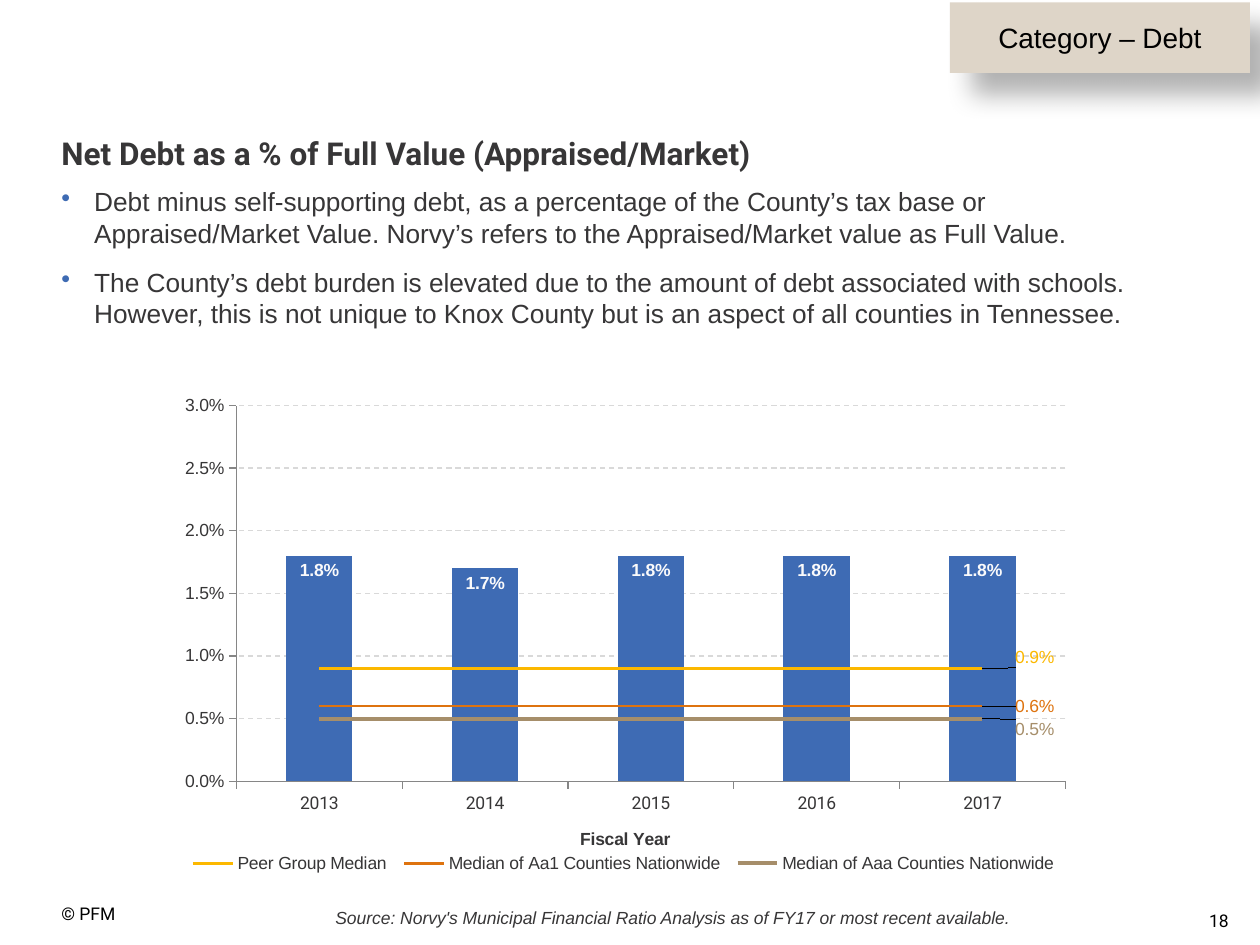
from dataclasses import dataclass

from lxml.etree import SubElement
from pptx import Presentation
from pptx.chart.data import CategoryChartData
from pptx.dml.color import RGBColor
from pptx.enum.chart import XL_CHART_TYPE, XL_LABEL_POSITION, XL_LEGEND_POSITION, XL_TICK_MARK
from pptx.enum.dml import MSO_LINE
from pptx.enum.shapes import MSO_SHAPE
from pptx.enum.text import MSO_ANCHOR, PP_ALIGN
from pptx.oxml import parse_xml
from pptx.oxml.ns import nsdecls, qn
from pptx.slide import Slide
from pptx.util import Cm, Pt

YEARS = ["2013", "2014", "2015", "2016", "2017"]
COUNTY_DEBT = [0.018, 0.017, 0.018, 0.018, 0.018]
# name, constant value, colour, line width, vertical shift of the end label
MEDIANS = [
    ("Peer Group Median", 0.009, "FCB800", 1.5, -0.02),
    ("Median of Aa1 Counties Nationwide", 0.006, "DE730F", 1.5, 0),
    ("Median of Aaa Counties Nationwide", 0.005, "A68E6A", 2.25, 0.02),
]
POINTS = [
    "Debt minus self-supporting debt, as a percentage of the County’s tax base or "
    "Appraised/Market Value. Norvy’s refers to the Appraised/Market value as Full Value.",
    "The County’s debt burden is elevated due to the amount of debt associated with schools. "
    "However, this is not unique to Knox County but is an aspect of all counties in Tennessee.",
]


def rgb(hex_colour):
    return RGBColor.from_string(hex_colour)


def set_font(font, size=10, colour="373637", face="Arial", bold=False, italic=False):
    font.size, font.name = Pt(size), face
    font.bold, font.italic = bold, italic
    font.color.rgb = rgb(colour)


def write(paragraph, text, align=PP_ALIGN.LEFT, **font_format):
    paragraph.alignment = align
    run = paragraph.add_run()
    run.text = text
    set_font(run.font, **font_format)


def manual_layout(inner=False, **fractions):
    """Return a c:layout; x and y are shifts unless w and h are given too."""
    edge = "w" in fractions
    tags = '<c:layoutTarget val="inner"/>' if inner else ""
    if edge:
        tags += '<c:xMode val="edge"/><c:yMode val="edge"/>'
    tags += "".join(f'<c:{key} val="{value}"/>' for key, value in fractions.items())
    return parse_xml(f"<c:layout {nsdecls('c')}><c:manualLayout>{tags}</c:manualLayout></c:layout>")


def move_to_line_plot(chart, first):
    """Turn the series from index first onwards into lines on the same axes."""
    bars = chart._chartSpace.find(".//" + qn("c:barChart"))
    lines = parse_xml(f'<c:lineChart {nsdecls("c")}><c:grouping val="standard"/>'
                      '<c:varyColors val="0"/></c:lineChart>')
    for series in bars.findall(qn("c:ser"))[first:]:
        invert = series.find(qn("c:invertIfNegative"))
        if invert is not None:
            series.remove(invert)
        lines.append(series)
    SubElement(lines, qn("c:marker")).set("val", "1")
    for axis in bars.findall(qn("c:axId")):
        SubElement(lines, qn("c:axId")).set("val", axis.get("val"))
    bars.addnext(lines)


@dataclass
class DebtSlide:
    slide: Slide
    ink: str = "373637"
    blue: str = "3E6BB3"
    grid: str = "D9D9D9"
    axis: str = "868686"

    def frame(self, left, top, width, height, insets=(0, 0, 0, 0)):
        box = self.slide.shapes.add_textbox(Cm(left), Cm(top), Cm(width), Cm(height))
        frame = box.text_frame
        frame.word_wrap = True
        (frame.margin_left, frame.margin_top,
         frame.margin_right, frame.margin_bottom) = map(Cm, insets)
        return frame

    def text(self, text, *place, insets=(0, 0, 0, 0), spacing=None, **text_format):
        paragraph = self.frame(*place, insets).paragraphs[0]
        paragraph.line_spacing = spacing
        write(paragraph, text, **text_format)

    def bullets(self, points, *place):
        frame = self.frame(*place, (0, 0.13, 0.25, 0.13))
        for index, point in enumerate(points):
            paragraph = frame.add_paragraph() if index else frame.paragraphs[0]
            properties = paragraph._p.get_or_add_pPr()
            properties.set("marL", str(Cm(0.66)))
            properties.set("indent", str(Cm(-0.66)))
            colour = SubElement(properties, qn("a:buClr"))
            SubElement(colour, qn("a:srgbClr")).set("val", self.blue)
            SubElement(properties, qn("a:buChar")).set("char", "•")
            paragraph.space_before = Pt(4 if index else 0)
            paragraph.space_after = Pt(6)
            write(paragraph, point, size=15)

    def tag(self, text, left, top, width, height):
        """Add the category label with its soft lower-right shadow."""
        label = self.slide.shapes.add_shape(
            MSO_SHAPE.RECTANGLE, Cm(left), Cm(top), Cm(width), Cm(height))
        label.fill.solid()
        label.fill.fore_color.rgb = rgb("DED5C8")
        label.line.fill.background()
        label.shadow.inherit = False
        effects = label._element.spPr.find(qn("a:effectLst"))
        effects.append(parse_xml(
            f'<a:outerShdw {nsdecls("a")} blurRad="{Pt(15)}" dist="{Pt(18)}" dir="2700000" '
            'algn="tl" rotWithShape="0"><a:srgbClr val="000000"><a:alpha val="30000"/>'
            '</a:srgbClr></a:outerShdw>'))
        label.text_frame.vertical_anchor = MSO_ANCHOR.MIDDLE
        write(label.text_frame.paragraphs[0], text, PP_ALIGN.CENTER, size=16, colour="000000")

    def debt_chart(self, left, top, width, height):
        data = CategoryChartData(number_format="0.0%")
        data.categories = YEARS
        data.add_series("Series 1", COUNTY_DEBT)
        for name, value, *_ in MEDIANS:
            data.add_series(name, [value] * len(YEARS))
        chart = self.slide.shapes.add_chart(
            XL_CHART_TYPE.COLUMN_STACKED, Cm(left), Cm(top), Cm(width), Cm(height), data).chart
        set_font(chart.font, colour="000000")
        chart.has_title = False
        move_to_line_plot(chart, 1)
        self.style_bars(chart.plots[0])
        for series, (_, _, colour, weight, shift) in zip(chart.plots[1].series, MEDIANS):
            self.style_median(series, colour, weight, shift)
        self.style_axes(chart)
        self.style_legend(chart)
        plot_area = chart._chartSpace.chart.plotArea
        for old in plot_area.findall(qn("c:layout")):
            plot_area.remove(old)
        plot_area.insert(0, manual_layout(inner=True, x=0.08, y=0.04, w=0.9, h=0.71))

    def style_bars(self, plot):
        plot.gap_width, plot.overlap, plot.vary_by_categories = 150, 100, False
        bars = plot.series[0]
        bars.format.fill.solid()
        bars.format.fill.fore_color.rgb = rgb("3E6BB4")
        labels = bars.data_labels
        labels.show_value = True
        labels.position = XL_LABEL_POSITION.INSIDE_END
        set_font(labels.font, colour="FAFAFB", bold=True)

    def style_median(self, series, colour, weight, shift):
        series.smooth = False
        series.marker.style = None
        series.marker._element.get_or_add_marker().get_or_add_symbol().set("val", "none")
        series.format.line.color.rgb = rgb(colour)
        series.format.line.width = Pt(weight)
        series.data_labels.show_value = False
        end_label = series.points[len(YEARS) - 1].data_label
        set_font(end_label.font, colour=colour)
        end_label.position = XL_LABEL_POSITION.RIGHT
        index = series._element.find(".//" + qn("c:dLbl")).find(qn("c:idx"))
        index.addnext(manual_layout(x=0.03, y=shift))

    def style_axes(self, chart):
        years, share = chart.category_axis, chart.value_axis
        for axis, face in ((years, "Roboto"), (share, "Arial")):
            set_font(axis.tick_labels.font, face=face)
            axis.major_tick_mark = XL_TICK_MARK.OUTSIDE
            axis.format.line.color.rgb = rgb(self.axis)
        write(years.axis_title.text_frame.paragraphs[0], "Fiscal Year", PP_ALIGN.CENTER, bold=True)
        share.minimum_scale, share.maximum_scale, share.major_unit = 0, 0.03, 0.005
        share.tick_labels.number_format = "0.0%"
        share.tick_labels.number_format_is_linked = False
        rule = share.major_gridlines.format.line
        rule.color.rgb, rule.width, rule.dash_style = rgb(self.grid), Pt(0.75), MSO_LINE.DASH

    def style_legend(self, chart):
        chart.has_legend = True
        legend = chart.legend
        legend.position, legend.include_in_layout = XL_LEGEND_POSITION.BOTTOM, False
        set_font(legend.font)
        for old in legend._element.findall(qn("c:layout")):
            legend._element.remove(old)
        place = legend._element.find(qn("c:legendPos"))
        place.addnext(manual_layout(x=0.02, y=0.88, w=0.96, h=0.05))
        place.addnext(parse_xml(f'<c:legendEntry {nsdecls("c")}><c:idx val="0"/>'
                                '<c:delete val="1"/></c:legendEntry>'))


def main():
    deck = Presentation()
    deck.slide_width, deck.slide_height = Cm(25.4), Cm(19.05)
    page = DebtSlide(deck.slides.add_slide(deck.slide_layouts[6]))
    page.text("© PFM", 1.24, 18.21, 3.53, 0.69, face="Roboto", colour="000000")
    page.text("18", 17.4, 18.21, 7.62, 1.02, insets=(0.25, 0.13, 0.25, 0.13),
              align=PP_ALIGN.RIGHT, face="Roboto", colour="000000")
    page.bullets(POINTS, 1.24, 3.61, 22.12, 10.21)
    page.text("Net Debt as a % of Full Value (Appraised/Market)", 1.24, 2.79, 21.89, 0.71,
              spacing=0.9, size=18, face="Roboto", bold=True)
    page.text("Source: Norvy's Municipal Financial Ratio Analysis as of FY17 or most recent available.",
              6.53, 18.19, 18.8, 0.66, insets=(0.23, 0.1, 0.23, 0.1), italic=True)
    page.tag("Category – Debt", 19.15, 0.05, 6.05, 1.42)
    page.debt_chart(3.28, 7.75, 18.57, 10.67)
    deck.save("out.pptx")


if __name__ == "__main__":
    main()
